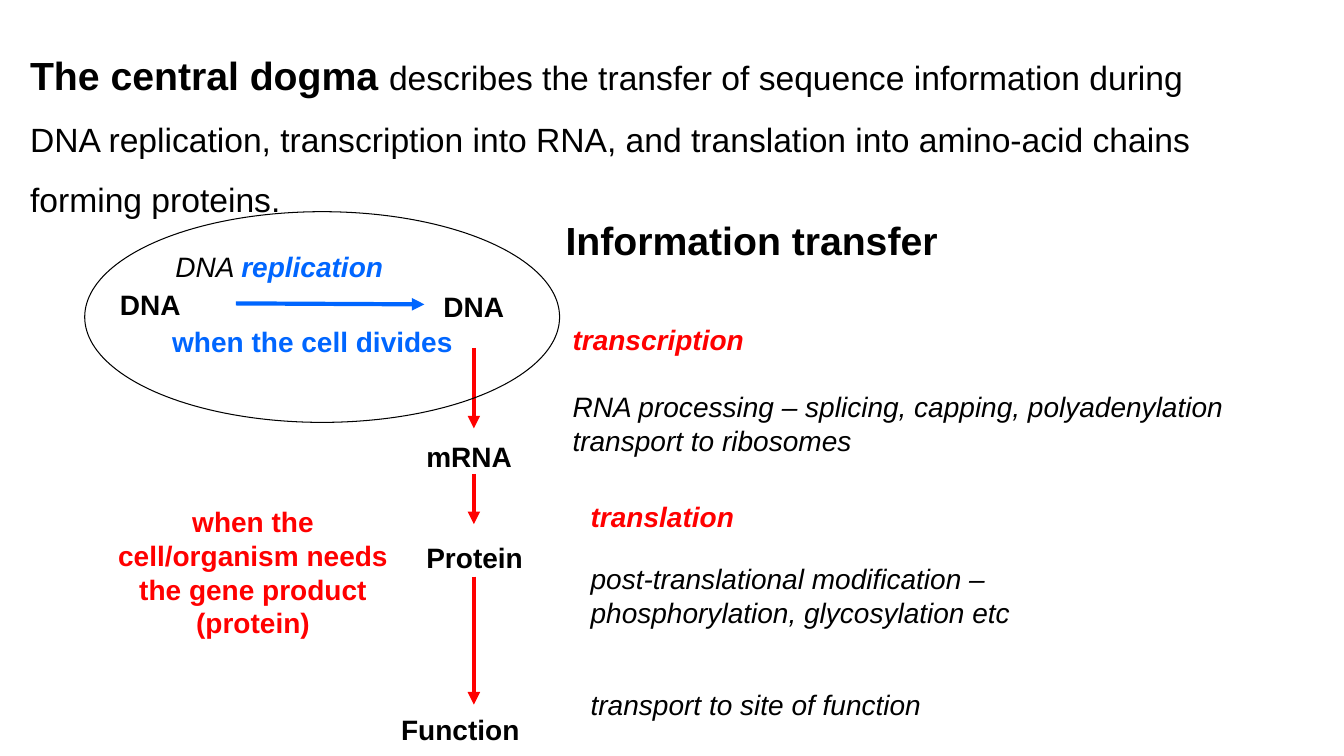
from lxml import etree
from pptx import Presentation
from pptx.dml.color import RGBColor
from pptx.enum.shapes import MSO_CONNECTOR, MSO_SHAPE
from pptx.enum.text import MSO_ANCHOR, MSO_AUTO_SIZE, PP_ALIGN
from pptx.oxml.ns import qn
from pptx.util import Inches, Pt

STRAIGHT = MSO_CONNECTOR.STRAIGHT
OVAL = MSO_SHAPE.OVAL
TOP = MSO_ANCHOR.TOP
NO_FIT, GROW = MSO_AUTO_SIZE.NONE, MSO_AUTO_SIZE.SHAPE_TO_FIT_TEXT
LEFT, CENTER = PP_ALIGN.LEFT, PP_ALIGN.CENTER

FONT = "Arial"
BLACK, RED, BLUE = "000000", "FF0000", "0066FF"
TITLE_ONLY = 5
ARROW_X = 4.7


def rgb(hex_color):
    return RGBColor.from_string(hex_color)


def style_run(run, color=BLACK, size=20, bold=False, italic=False):
    font = run.font
    font.name, font.size = FONT, Pt(size)
    font.bold, font.italic = bold, italic
    font.color.rgb = rgb(color)


def add_label(slide, left, top, width, height, lines, wrap=True, align=LEFT):
    """Each line is a list of (text, style) runs."""
    label = slide.shapes.add_textbox(Inches(left), Inches(top), Inches(width), Inches(height))
    frame = label.text_frame
    frame.word_wrap = wrap
    frame.auto_size = GROW
    for index, runs in enumerate(lines):
        paragraph = frame.add_paragraph() if index else frame.paragraphs[0]
        paragraph.alignment = align
        for text, style in runs:
            run = paragraph.add_run()
            run.text = text
            style_run(run, **style)
    return frame


def add_arrow(slide, start, end, color):
    points = [Inches(value) for value in (*start, *end)]
    arrow = slide.shapes.add_connector(STRAIGHT, *points)
    arrow.line.color.rgb = rgb(color)
    arrow.line.width = Pt(3)
    etree.SubElement(arrow.line._get_or_add_ln(), qn("a:tailEnd"), type="triangle")
    etree.SubElement(arrow._element.spPr, qn("a:effectLst"))


def add_replication_ellipse(slide):
    ellipse = slide.shapes.add_shape(OVAL, Inches(0.84), Inches(2.1), Inches(4.71), Inches(2.09))
    ellipse.shadow.inherit = False
    ellipse.fill.background()
    ellipse.line.color.rgb = rgb(BLACK)
    ellipse.line.width = Pt(0.75)


def set_title(slide, text):
    title = slide.shapes.title
    title.left, title.top = Inches(5.51), Inches(2.15)
    title.width, title.height = Inches(5.24), Inches(1.25)
    frame = title.text_frame
    frame.text = text
    frame.vertical_anchor = TOP
    frame.auto_size = NO_FIT
    paragraph = frame.paragraphs[0]
    paragraph.alignment = LEFT
    paragraph.line_spacing = 0.9
    style_run(paragraph.runs[0], size=28, bold=True)


def main():
    prs = Presentation()
    prs.slide_width, prs.slide_height = Inches(13.33), Inches(7.5)
    slide = prs.slides.add_slide(prs.slide_layouts[TITLE_ONLY])

    bold = {"bold": True}
    italic = {"italic": True}
    red_step = {"color": RED, "bold": True, "italic": True}

    # Definition and heading
    set_title(slide, "Information transfer")
    definition = add_label(slide, 0.2, 0.23, 12.39, 1.94, [[
        ("The central dogma ", {"size": 28, "bold": True}),
        ("describes the transfer of sequence information during DNA replication, "
         "transcription into RNA, and translation into amino-acid chains forming proteins.",
         {"size": 24}),
    ]])
    definition.paragraphs[0].line_spacing = 1.5

    # Molecules along the pathway
    for text, left, top, width in (
        ("DNA", 1.09, 2.8, 0.81),
        ("DNA", 4.3, 2.82, 0.81),
        ("mRNA", 4.13, 4.31, 1.06),
        ("Protein", 4.13, 5.31, 1.17),
        ("Function", 3.88, 7.02, 1.39),
    ):
        add_label(slide, left, top, width, 0.35, [[(text, bold)]], wrap=False)

    # Arrows between molecules
    for top, bottom in ((3.45, 4.25), (4.7, 5.2), (5.72, 6.99)):
        add_arrow(slide, (ARROW_X, top), (ARROW_X, bottom), RED)
    add_arrow(slide, (2.34, 3.01), (4.21, 3.02), BLUE)

    # Replication
    add_label(slide, 1.64, 2.43, 2.28, 0.35, [[
        ("DNA ", italic),
        ("replication", {"color": BLUE, "bold": True, "italic": True}),
    ]], wrap=False)

    # When each transfer happens
    for text, left, top, height, color in (
        ("when the cell divides", 1.5, 3.17, 0.35, BLUE),
        ("when the cell/organism needs the gene product (protein)", 0.91, 4.96, 1.15, RED),
    ):
        add_label(slide, left, top, 3.2, height,
                  [[(text, {"color": color, "bold": True})]], align=CENTER)

    # Transcription and translation steps
    transcription = add_label(slide, 5.58, 3.15, 7.01, 1.15, [
        [("transcription", red_step)],
        [("RNA processing – splicing, capping, polyadenylation", italic)],
        [("transport to ribosomes", italic)],
    ])
    transcription.paragraphs[1].space_before = Pt(24)
    for text, top, width, height, style, wrap in (
        ("translation", 4.91, 6.07, 0.35, red_step, True),
        ("post-translational modification – phosphorylation, glycosylation etc",
         5.52, 6.07, 0.62, italic, True),
        ("transport to site of function", 6.77, 3.5, 0.35, italic, False),
    ):
        add_label(slide, 5.76, top, width, height, [[(text, style)]], wrap=wrap)

    add_replication_ellipse(slide)
    prs.save("out.pptx")


if __name__ == "__main__":
    main()
